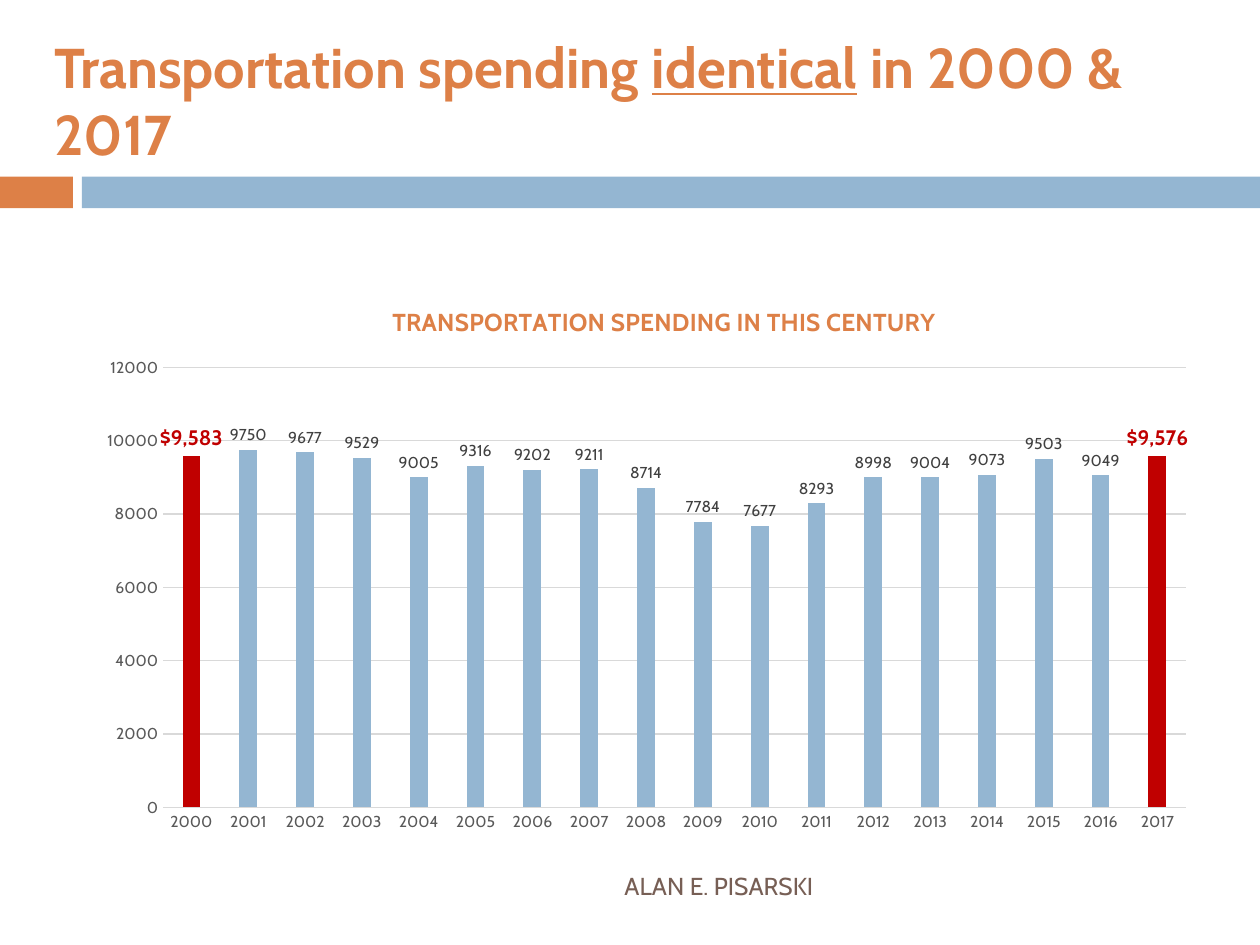
from lxml import etree
from pptx import Presentation
from pptx.chart.data import CategoryChartData
from pptx.dml.color import RGBColor
from pptx.enum.chart import XL_CHART_TYPE, XL_LABEL_POSITION, XL_TICK_MARK
from pptx.enum.shapes import MSO_SHAPE
from pptx.enum.text import MSO_ANCHOR, PP_ALIGN
from pptx.oxml.ns import qn
from pptx.util import Cm, Pt

RECTANGLE = MSO_SHAPE.RECTANGLE
COLUMNS = XL_CHART_TYPE.COLUMN_CLUSTERED
OUTSIDE_END = XL_LABEL_POSITION.OUTSIDE_END
NO_TICKS = XL_TICK_MARK.NONE
MIDDLE = MSO_ANCHOR.MIDDLE
LEFT, RIGHT = PP_ALIGN.LEFT, PP_ALIGN.RIGHT

ORANGE = RGBColor(0xDD, 0x80, 0x47)
BLUE = RGBColor(0x94, 0xB6, 0xD2)
BROWN = RGBColor(0x77, 0x5F, 0x55)
RED = RGBColor(0xC0, 0x00, 0x00)
GRID_GREY = RGBColor(0xD9, 0xD9, 0xD9)
AXIS_GREY = RGBColor(0x59, 0x59, 0x59)
LABEL_GREY = RGBColor(0x40, 0x40, 0x40)

FONT = "Cabin"
SLIDE_WIDTH, SLIDE_HEIGHT = 25.4, 19.05
SPENDING = [9583, 9750, 9677, 9529, 9005, 9316, 9202, 9211, 8714,
            7784, 7677, 8293, 8998, 9004, 9073, 9503, 9049, 9576]
YEARS = [str(2000 + offset) for offset in range(len(SPENDING))]


def apply_format(target, values):
    """Set each attribute of the target from a dict of format values."""
    for name, value in values.items():
        setattr(target, name, value)


def style_font(font, size, color, bold=False):
    """Give a font the deck's typeface with a size, colour and weight."""
    apply_format(font, {"name": FONT, "size": Pt(size), "bold": bold})
    font.color.rgb = color


def style_line(line, color, width=0.75):
    """Give a line a colour and a width in points."""
    line.color.rgb = color
    line.width = Pt(width)


def add_words(slide, box, runs, size, color, bold=False, align=LEFT):
    """Place one paragraph made of (words, underlined) runs in a box."""
    frame = slide.shapes.add_textbox(*map(Cm, box)).text_frame
    apply_format(frame, {"word_wrap": True, "vertical_anchor": MIDDLE})
    paragraph = frame.paragraphs[0]
    paragraph.alignment = align
    for words, underlined in runs:
        run = paragraph.add_run()
        run.text = words
        style_font(run.font, size, color, bold)
        run.font.underline = underlined


def add_band(slide, box, accent_width=1.47, gap=0.18):
    """Split a box into a short orange block and a long blue bar."""
    left, top, width, height = box
    bar_offset = accent_width + gap
    for offset, part_width, color in (
        (0, accent_width, ORANGE),
        (bar_offset, width - bar_offset, BLUE),
    ):
        part = slide.shapes.add_shape(
            RECTANGLE, Cm(left + offset), Cm(top), Cm(part_width), Cm(height))
        part.shadow.inherit = False
        part.fill.solid()
        part.fill.fore_color.rgb = color
        part.line.fill.background()


def set_layout(element, index, **fractions):
    """Fix a chart part's place as fractions of the chart box."""
    for old_layout in element.findall(qn("c:layout")):
        element.remove(old_layout)
    layout = etree.Element(qn("c:layout"))
    manual = etree.SubElement(layout, qn("c:manualLayout"))
    settings = {"xMode": "edge", "yMode": "edge", **fractions}
    if "w" in fractions:
        settings = {"layoutTarget": "inner", **settings}
    for name, value in settings.items():
        etree.SubElement(manual, qn(f"c:{name}"), val=str(value))
    element.insert(index, layout)


def highlight_year(series, index):
    """Colour one column red and label it in bold dollars."""
    point = series.points[index]
    point.format.fill.solid()
    point.format.fill.fore_color.rgb = RED
    style_font(point.data_label.font, 12, RED, True)
    point.data_label.position = OUTSIDE_END
    label = series._element.xpath(f"c:dLbls/c:dLbl[c:idx/@val='{index}']")[0]
    dollars = etree.Element(
        qn("c:numFmt"), formatCode='"$"#,##0', sourceLinked="0")
    label.find(qn("c:txPr")).addprevious(dollars)


def style_axes(chart):
    """Style the year axis, the spending axis and the gridlines."""
    years, spending = chart.category_axis, chart.value_axis
    for axis in (years, spending):
        apply_format(axis, {"major_tick_mark": NO_TICKS,
                            "minor_tick_mark": NO_TICKS})
        style_font(axis.tick_labels.font, 9, AXIS_GREY)
    style_line(years.format.line, GRID_GREY)
    apply_format(spending, {"minimum_scale": 0, "maximum_scale": 12000,
                            "major_unit": 2000, "has_major_gridlines": True})
    style_line(spending.major_gridlines.format.line, GRID_GREY)
    spending.format.line.fill.background()


def add_spending_chart(slide, box):
    """Place the yearly spending column chart in a box."""
    data = CategoryChartData(number_format="General")
    data.categories = YEARS
    data.add_series("Series 1", SPENDING)
    chart = slide.shapes.add_chart(COLUMNS, *map(Cm, box), data).chart
    apply_format(chart, {"has_legend": False, "has_title": True})
    style_font(chart.font, 10, RGBColor(0, 0, 0))

    heading = chart.chart_title.text_frame.paragraphs[0].add_run()
    heading.text = "TRANSPORTATION SPENDING IN THIS CENTURY"
    style_font(heading.font, 14, ORANGE, True)
    set_layout(chart.chart_title._element, 1, x=0.27, y=0.03)
    plot_area = chart._chartSpace.xpath("c:chart/c:plotArea")[0]
    set_layout(plot_area, 0, x=0.07, y=0.15, w=0.91, h=0.79)
    style_axes(chart)

    plot = chart.plots[0]
    apply_format(plot, {"gap_width": 219, "overlap": -27,
                        "vary_by_categories": False})
    series = plot.series[0]
    series.format.fill.solid()
    series.format.fill.fore_color.rgb = BLUE
    labels = series.data_labels
    apply_format(labels, {"show_value": True, "position": OUTSIDE_END})
    style_font(labels.font, 9, LABEL_GREY)
    for index in (0, len(SPENDING) - 1):
        highlight_year(series, index)


def main():
    """Build and save the transportation spending slide."""
    deck = Presentation()
    apply_format(deck, {"slide_width": Cm(SLIDE_WIDTH),
                        "slide_height": Cm(SLIDE_HEIGHT)})
    slide = deck.slides.add_slide(deck.slide_layouts[6])
    add_band(slide, (0, 3.56, SLIDE_WIDTH, 0.64))
    headline = [("Transportation spending ", False), ("identical", True),
                (" in 2000 & 2017", False)]
    add_words(slide, (0.84, 0.64, 23.93, 2.74), headline, 32, ORANGE, True)
    add_words(slide, (1.7, 17.35, 15.06, 1.02),
              [("ALAN E. PISARSKI ", False)], 14, BROWN, align=RIGHT)
    add_spending_chart(slide, (1.7, 5.72, 22.66, 11.23))
    deck.save("out.pptx")


if __name__ == "__main__":
    main()
